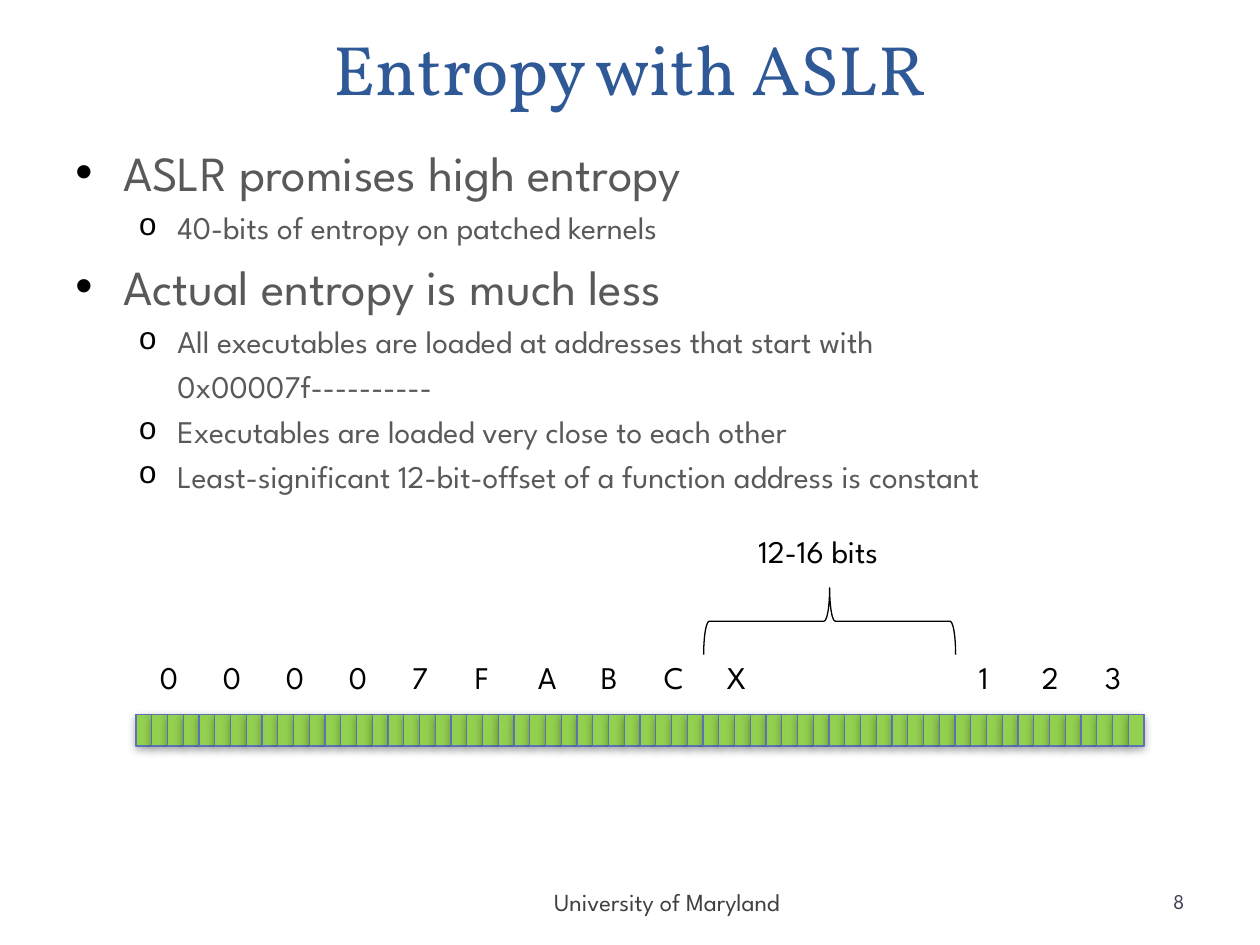
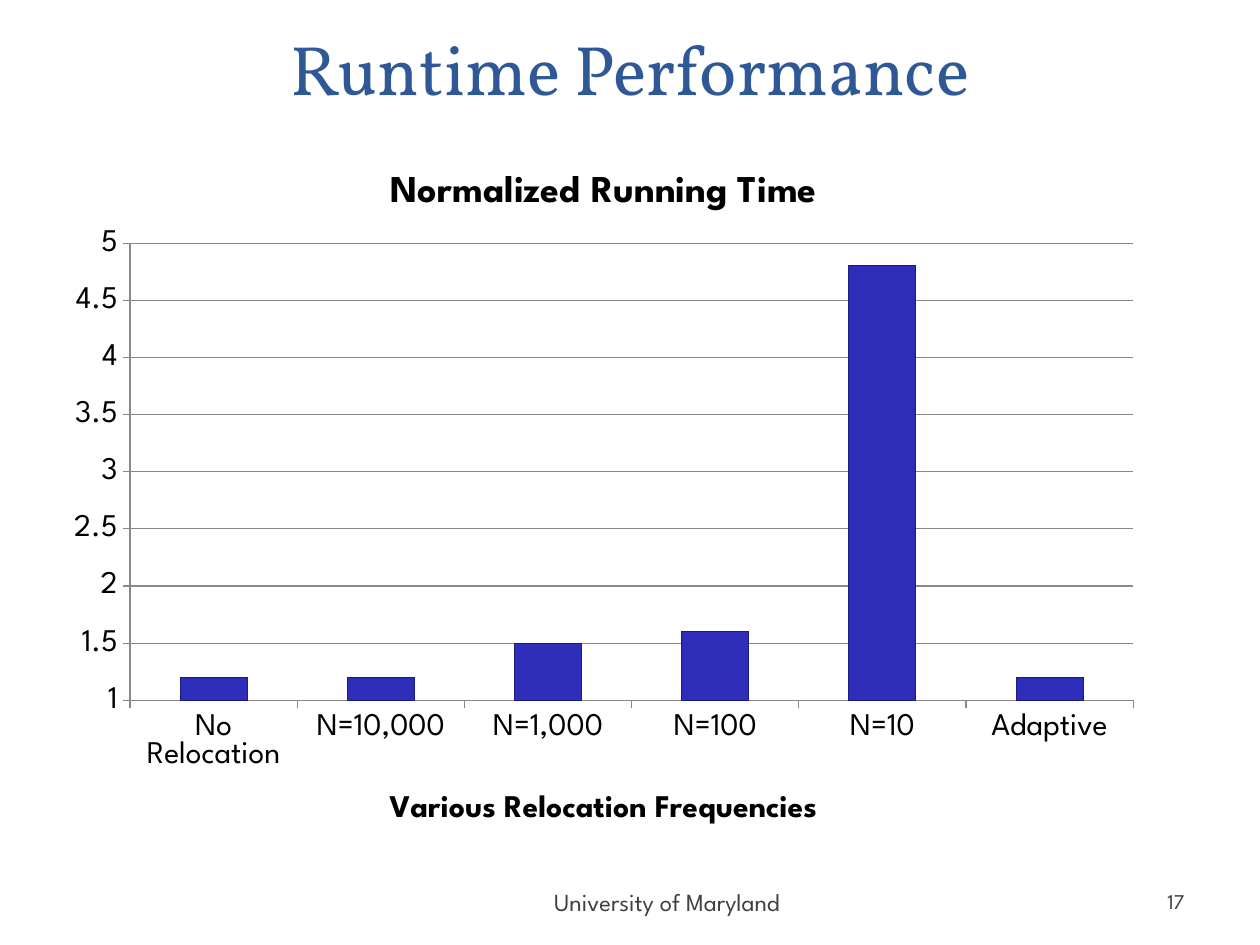
"""Build two slides on address entropy and on the running time of relocation."""
from dataclasses import dataclass

from lxml.etree import SubElement
from pptx import Presentation
from pptx.chart.chart import Chart
from pptx.chart.data import CategoryChartData
from pptx.dml.color import RGBColor
from pptx.enum.chart import XL_CHART_TYPE, XL_TICK_MARK
from pptx.enum.shapes import MSO_SHAPE
from pptx.enum.text import MSO_ANCHOR, MSO_AUTO_SIZE, PP_ALIGN
from pptx.oxml import parse_xml
from pptx.oxml.ns import nsdecls, qn
from pptx.slide import Slide
from pptx.text.text import Font, TextFrame
from pptx.util import Inches, Pt

BLUE = RGBColor(0x2F, 0x58, 0x97)
GRAY = RGBColor(0x59, 0x59, 0x59)
DARK = RGBColor(0x40, 0x40, 0x40)
SLATE = RGBColor(0x42, 0x44, 0x56)
BLACK = RGBColor(0, 0, 0)
GREEN = RGBColor(0x92, 0xD0, 0x50)
EDGE = RGBColor(0x5C, 0x72, 0xB2)
BAR = RGBColor(0x2D, 0x2D, 0xB9)
RIM = RGBColor(0x1C, 0x1C, 0x80)
GRID = RGBColor(0x88, 0x88, 0x88)
SANS, SERIF = "League Spartan", "Vollkorn"


@dataclass(frozen=True)
class Box:
    """Place of an element in inches."""
    left: float
    top: float
    width: float
    height: float

    def spans(self) -> tuple:
        return tuple(Inches(n) for n in (self.left, self.top, self.width, self.height))


@dataclass(frozen=True)
class Level:
    """Look of one outline level."""
    mark: str
    face: str
    size: int
    indent: float
    hang: float
    before: int


@dataclass(frozen=True)
class Point:
    """One line of the outline."""
    text: str
    level: int = 1
    marked: bool = True


LEVELS = (Level("•", "Arial", 28, 0.38, 0.38, 6), Level("o", "Courier New", 18, 0.81, 0.31, 4))
POINTS = (
    Point("ASLR promises high entropy", 0),
    Point("40-bits of entropy on patched kernels"),
    Point("Actual entropy is much less", 0),
    Point("All executables are loaded at addresses that start with"),
    Point("0x00007f----------", marked=False),
    Point("Executables are loaded very close to each other"),
    Point("Least-significant 12-bit-offset of a function address is constant"),
)
NIBBLES = "00007FABCX   123"
TIMES = {"No Relocation": 1.2, "N=10,000": 1.2, "N=1,000": 1.5,
         "N=100": 1.6, "N=10": 4.8, "Adaptive": 1.2}


def style(font: Font, size: float, color: RGBColor, name: str = SANS, bold: bool = False) -> None:
    """Set the look of a font."""
    for key, value in {"size": Pt(size), "name": name, "bold": bold}.items():
        setattr(font, key, value)
    font.color.rgb = color


def label(slide: Slide, box: Box, text: str, size: int, color: RGBColor,
          align: PP_ALIGN = PP_ALIGN.LEFT, anchor: MSO_ANCHOR = MSO_ANCHOR.TOP) -> TextFrame:
    """Add a line of text."""
    frame = slide.shapes.add_textbox(*box.spans()).text_frame
    frame.word_wrap = True
    frame.vertical_anchor = anchor
    line = frame.paragraphs[0]
    line.alignment = align
    run = line.add_run()
    run.text = text
    style(run.font, size, color)
    return frame


def start(deck: Presentation, text: str, number: str, tint: RGBColor) -> Slide:
    """Add a slide with its title, footer and number."""
    slide = deck.slides.add_slide(deck.slide_layouts[5])
    title = slide.shapes.title
    spans = Box(0.5, 0, 9, 0.92).spans()
    for key, value in zip(("left", "top", "width", "height"), spans):
        setattr(title, key, value)
    frame = title.text_frame
    frame.text = text
    frame.auto_size = MSO_AUTO_SIZE.NONE
    frame.vertical_anchor = MSO_ANCHOR.BOTTOM
    line = frame.paragraphs[0]
    line.alignment = PP_ALIGN.CENTER
    line.line_spacing = Pt(57.9)
    style(line.runs[0].font, 40, BLUE, SERIF)
    foot = label(slide, Box(3.75, 6.91, 3.11, 0.5), "University of Maryland", 14, DARK,
                 PP_ALIGN.CENTER, MSO_ANCHOR.MIDDLE)
    foot.margin_left, foot.margin_right = Inches(0.03), Inches(0.05)
    label(slide, Box(7.17, 6.95, 2.33, 0.4), number, 12, tint, PP_ALIGN.RIGHT, MSO_ANCHOR.MIDDLE)
    return slide


def outline(slide: Slide, box: Box) -> None:
    """Add the bulleted text."""
    frame = slide.shapes.add_textbox(*box.spans()).text_frame
    frame.word_wrap = True
    for rank, point in enumerate(POINTS):
        look = LEVELS[point.level]
        line = frame.add_paragraph() if rank else frame.paragraphs[0]
        line.level = point.level
        props = line._p.get_or_add_pPr()
        props.set("marL", str(Inches(look.indent)))
        props.set("indent", str(-Inches(look.hang) if point.marked else 0))
        if point.marked:
            tone = SubElement(props, qn("a:buClr"))
            SubElement(tone, qn("a:srgbClr"), val=str(BLACK))
            SubElement(props, qn("a:buFont"), typeface=look.face)
            SubElement(props, qn("a:buChar"), char=look.mark)
        if rank:
            line.space_before = Pt(look.before)
        run = line.add_run()
        run.text = point.text
        style(run.font, look.size, GRAY)


def bits(slide: Slide, left: float, top: float, count: int) -> None:
    """Draw the address as a row of bit cells."""
    step = Inches(8) // count
    for rank in range(count):
        cell = slide.shapes.add_shape(MSO_SHAPE.RECTANGLE, Inches(left) + rank * step,
                                      Inches(top), step, Inches(0.25))
        cell.fill.solid()
        cell.fill.fore_color.rgb = GREEN
        cell.line.color.rgb = EDGE
        cell.line.width = Pt(0.75)
        cell.shadow.inherit = False
        glow = SubElement(cell._element.spPr.find(qn("a:effectLst")), qn("a:outerShdw"),
                          blurRad=str(Pt(5)), dist=str(Pt(1.8)), dir="5400000", rotWithShape="0")
        tone = SubElement(glow, qn("a:srgbClr"), val=str(BLACK))
        SubElement(tone, qn("a:alpha"), val="35000")


def entropy(deck: Presentation) -> None:
    """Build the entropy slide."""
    slide = start(deck, "Entropy with ASLR", "8", SLATE)
    outline(slide, Box(0.5, 1.08, 9, 3))
    bits(slide, 1.08, 5.67, 64)
    for rank, digit in enumerate(NIBBLES):
        if digit.strip():
            label(slide, Box(1.17 + rank / 2, 5.17, 0.45, 0.4), digit, 18, BLACK)
    brace = slide.shapes.add_shape(MSO_SHAPE.RIGHT_BRACE, *Box(6.32, 3.93, 0.53, 2).spans())
    brace.rotation = 270
    brace.fill.background()
    brace.line.color.rgb = BLACK
    brace.line.width = Pt(0.75)
    brace.shadow.inherit = False
    label(slide, Box(5.92, 4.17, 1.32, 0.4), "12-16 bits", 18, BLACK)


def place(host, **spots: float) -> None:
    """Fix the layout of a chart part at fractions of the chart."""
    for old in host.findall(qn("c:layout")):
        host.remove(old)
    rows = "".join(f'<c:{key} val="{value}"/>' for key, value in spots.items())
    inner = '<c:layoutTarget val="inner"/>' if "w" in spots else ""
    layout = parse_xml(f'<c:layout {nsdecls("c")}><c:manualLayout>{inner}<c:xMode val="edge"/>'
                       f'<c:yMode val="edge"/>{rows}</c:manualLayout></c:layout>')
    text = host.find(qn("c:tx"))
    host.insert(0 if text is None else 1, layout)


def head(owner, text: str, size: float, left: float, top: float) -> None:
    """Give a chart or an axis its title."""
    owner.has_title = True
    title = getattr(owner, "chart_title", None) or owner.axis_title
    title.text_frame.text = text
    style(title.text_frame.paragraphs[0].runs[0].font, size, BLACK, bold=True)
    place(title._element, x=left, y=top)


def plot(chart: Chart) -> None:
    """Format the chart."""
    chart.has_legend = False
    style(chart.font, 18, BLACK)
    head(chart, "Normalized Running Time", 21.6, 0.3, 0.04)
    head(chart.category_axis, "Various Relocation Frequencies", 18, 0.3, 0.91)
    for axis in (chart.category_axis, chart.value_axis):
        axis.major_tick_mark = XL_TICK_MARK.OUTSIDE
        axis.format.line.color.rgb = GRID
    scale = {"minimum_scale": 1, "maximum_scale": 5, "major_unit": 0.5, "has_major_gridlines": True}
    for key, value in scale.items():
        setattr(chart.value_axis, key, value)
    chart.value_axis.major_gridlines.format.line.color.rgb = GRID
    chart.value_axis.tick_labels.number_format = "General"
    chart.value_axis.tick_labels.number_format_is_linked = False
    bars = chart.plots[0]
    bars.gap_width = 150
    bars.vary_by_categories = False
    look = bars.series[0].format
    look.fill.solid()
    look.fill.fore_color.rgb = BAR
    look.line.color.rgb = RIM
    place(chart._chartSpace.chart.plotArea, x=0.07, y=0.15, w=0.91, h=0.64)


def runtime(deck: Presentation) -> None:
    """Build the running time slide."""
    slide = start(deck, "Runtime Performance", "17", DARK)
    data = CategoryChartData()
    data.categories = list(TIMES)
    data.add_series("Normalized Running Time", list(TIMES.values()))
    spans = Box(0.42, 1.08, 8.75, 5.67).spans()
    plot(slide.shapes.add_chart(XL_CHART_TYPE.COLUMN_CLUSTERED, *spans, data).chart)


def main() -> None:
    """Build and save the deck."""
    deck = Presentation()
    deck.slide_width, deck.slide_height = Inches(10), Inches(7.5)
    entropy(deck)
    runtime(deck)
    deck.save("out.pptx")


if __name__ == "__main__":
    main()
